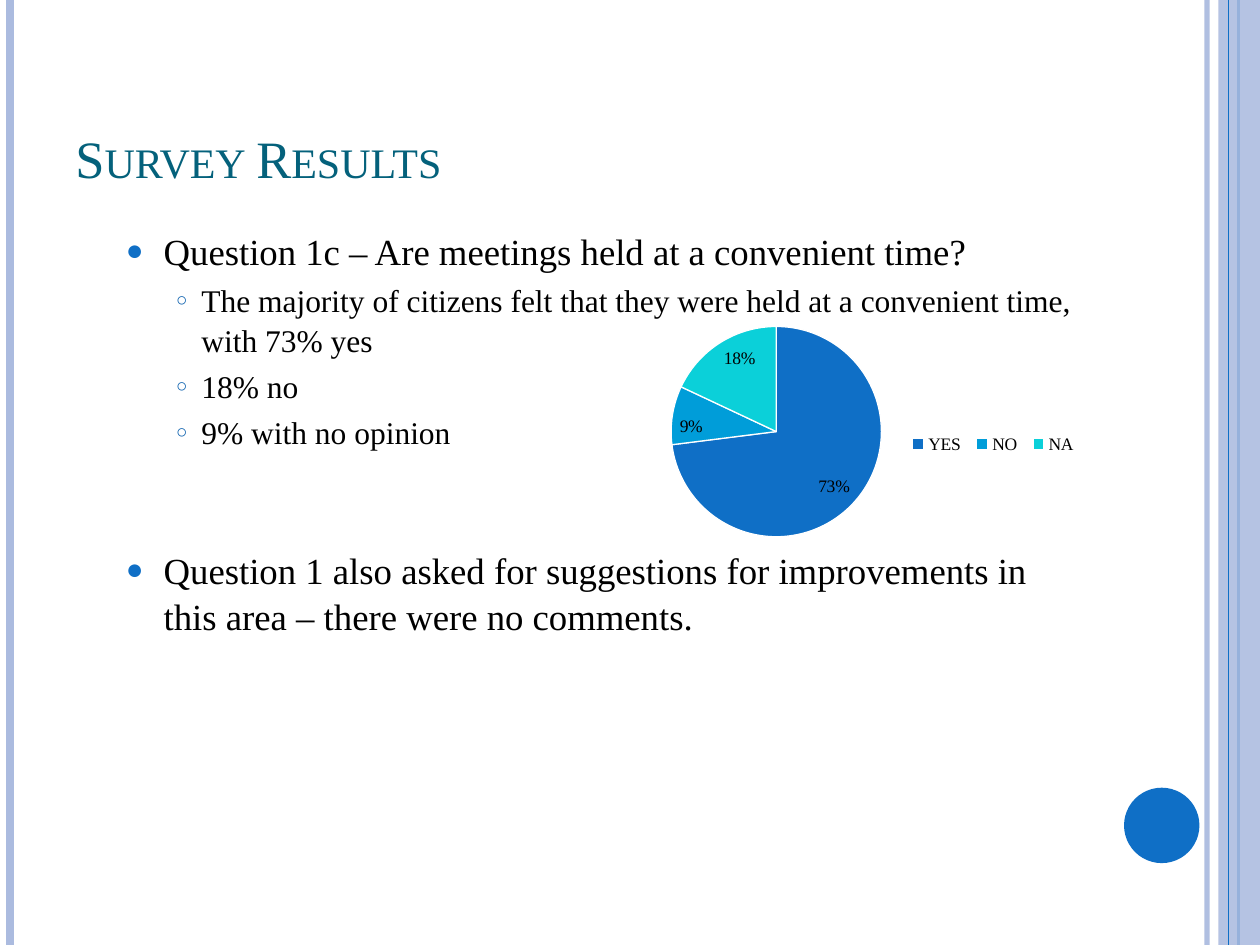
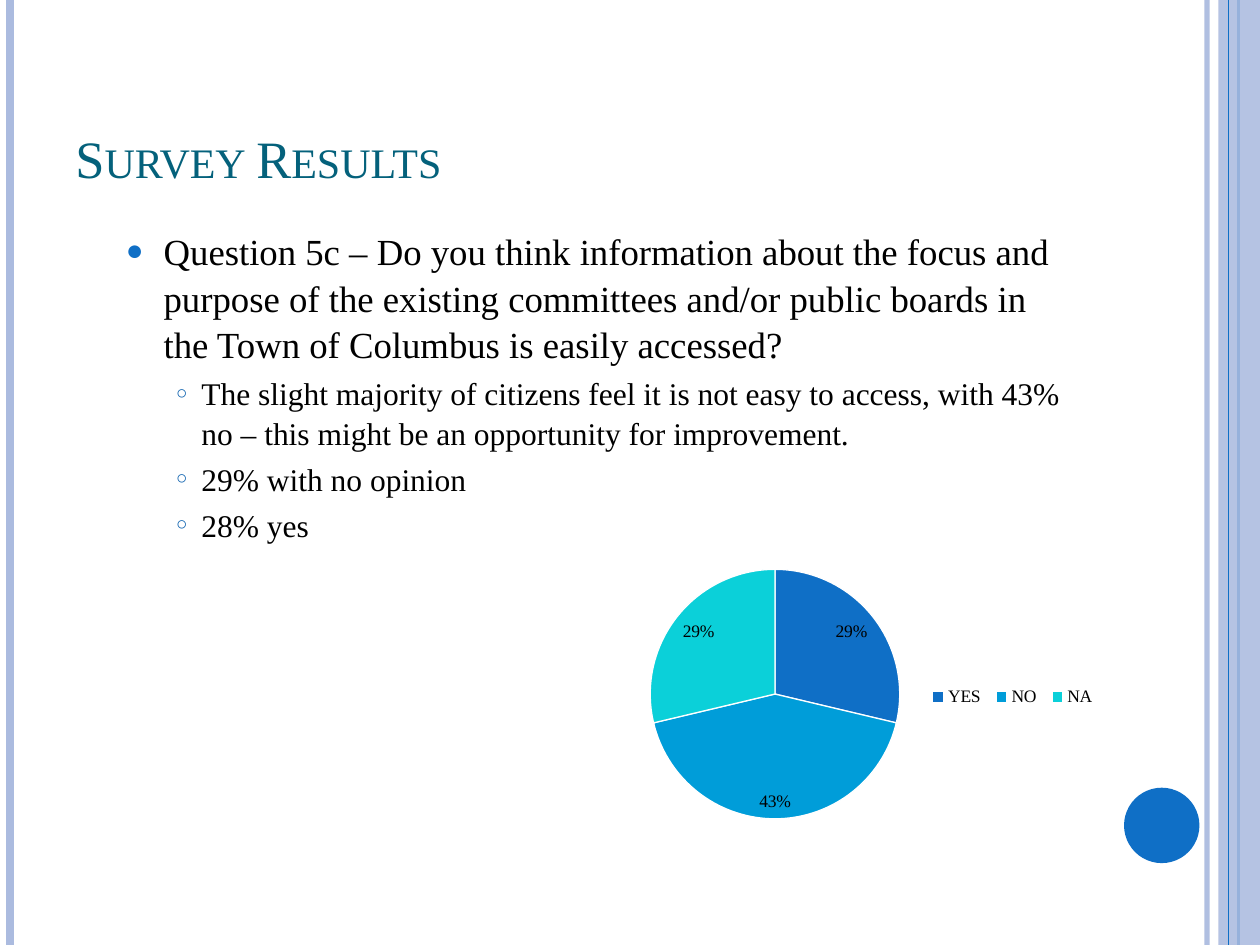
from lxml import etree
from pptx import Presentation
from pptx import util as u
from pptx.chart.data import CategoryChartData
from pptx.dml.color import RGBColor
from pptx.enum import chart as charts, shapes, text
from pptx.oxml import ns

# Shared colours and font
BLUE = RGBColor(0x0F, 0x6F, 0xC6)
DARK_BLUE = RGBColor(0x0D, 0x62, 0xAF)
SKY = RGBColor(0x00, 0x9D, 0xD9)
TURQUOISE = RGBColor(0x0B, 0xD0, 0xD9)
LAVENDER = RGBColor(0xAB, 0xBB, 0xDF)
TEAL = RGBColor(0x04, 0x61, 0x7B)
BLACK = RGBColor(0, 0, 0)
WHITE = RGBColor(255, 255, 255)
FONT = "Times New Roman"

# Text levels: size, indents in cm, space before and bullet
LEVELS = {
    1: dict(size=21, left=1.78, hanging=0.76, before=4.2,
            bullet=("●", BLUE, 80)),
    2: dict(size=18, left=2.54, hanging=0.51, before=3.6,
            bullet=("○", DARK_BLUE, 60)),
}

# Vertical lines: x in cm, weight in points, colour, opacity in percent
LINES = [(24.33, 3, LAVENDER, 93), (0.2, 4.5, LAVENDER, 100),
         (24.97, 1.5, BLUE, 100), (24.77, 0.75, BLUE, 100)]

# Slide contents: (level, text, extra space before), chart box in cm,
# plot and legend boxes as shares of the chart
SLIDES = [
    dict(
        paragraphs=[
            (1, "Question 1c – Are meetings held at a convenient time?", 0),
            (2, "The majority of citizens felt that they were held at a "
                "convenient time, with 73% yes", 0),
            (2, "18% no", 0),
            (2, "9% with no opinion", 0),
            (1, "Question 1 also asked for suggestions for improvements in "
                "this area – there were no comments.", 50),
        ],
        values=(73, 9, 18),
        chart_box=(9.53, 6.35, 13.54, 4.65),
        plot=(0.295, 0.05, 0.314, 0.912),
        legend=(0.64, 0.5, 0.27, 0.12),
    ),
    dict(
        paragraphs=[
            (1, "Question 5c – Do you think information about the focus and "
                "purpose of the existing committees and/or public boards in "
                "the Town of Columbus is easily accessed?", 0),
            (2, "The slight majority of citizens feel it is not easy to "
                "access, with 43% no – this might be an opportunity for "
                "improvement.", 0),
            (2, "29% with no opinion", 0),
            (2, "28% yes", 0),
        ],
        values=(29, 43, 29),
        chart_box=(8.05, 9.96, 14.17, 7.47),
        plot=(0.357, 0.202, 0.355, 0.676),
        legend=(0.745, 0.51, 0.26, 0.075),
    ),
]


def add_paragraph(frame, content, size=18, color=BLACK, left=0, hanging=0,
                  before=0, spacing=1.0, bullet=None, small_caps=False):
    paragraph = frame.paragraphs[0]
    if paragraph.runs:
        paragraph = frame.add_paragraph()
    paragraph.line_spacing = spacing
    paragraph.space_before = u.Pt(before)
    run = paragraph.add_run()
    run.text = content
    run.font.name = FONT
    run.font.size = u.Pt(size)
    run.font.color.rgb = color
    if small_caps:
        run.font._element.set("cap", "small")
    if bullet:
        symbol, bullet_color, percent = bullet
        properties = paragraph._p.get_or_add_pPr()
        properties.set("marL", str(u.Cm(left)))
        properties.set("indent", str(-u.Cm(hanging)))
        holder = etree.SubElement(properties, ns.qn("a:buClr"))
        etree.SubElement(holder, ns.qn("a:srgbClr"), val=str(bullet_color))
        etree.SubElement(properties, ns.qn("a:buSzPct"), val=str(percent * 1000))
        etree.SubElement(properties, ns.qn("a:buFont"), typeface=FONT)
        etree.SubElement(properties, ns.qn("a:buChar"), char=symbol)


def set_layout(parent, index, box, inner=False):
    for old in parent.findall(ns.qn("c:layout")):
        parent.remove(old)
    layout = etree.Element(ns.qn("c:layout"))
    manual = etree.SubElement(layout, ns.qn("c:manualLayout"))
    if inner:
        etree.SubElement(manual, ns.qn("c:layoutTarget"), val="inner")
    for mode in ("xMode", "yMode"):
        etree.SubElement(manual, ns.qn("c:" + mode), val="edge")
    for name, share in zip("xywh", box):
        etree.SubElement(manual, ns.qn("c:" + name), val=str(share))
    parent.insert(index, layout)


presentation = Presentation()
presentation.slide_width = u.Cm(25.4)
presentation.slide_height = u.Cm(19.05)

for content in SLIDES:
    slide = presentation.slides.add_slide(presentation.slide_layouts[6])

    # Vertical lines
    for x, weight, color, opacity in LINES:
        line = slide.shapes.add_connector(
            shapes.MSO_CONNECTOR.STRAIGHT, u.Cm(x), 0, u.Cm(x), u.Cm(19.05))
        line.line.width = u.Pt(weight)
        line.line.color.rgb = color
        etree.SubElement(line._element.spPr, ns.qn("a:effectLst"))
        if opacity < 100:
            etree.SubElement(line._element.find(".//" + ns.qn("a:srgbClr")),
                             ns.qn("a:alpha"), val=str(opacity * 1000))

    # Translucent right band and round badge
    for kind, color, box in (
            (shapes.MSO_SHAPE.RECTANGLE, LAVENDER, (24.56, 0, 0.84, 19.05)),
            (shapes.MSO_SHAPE.OVAL, BLUE, (22.66, 15.88, 1.52, 1.52))):
        shape = slide.shapes.add_shape(kind, *map(u.Cm, box))
        shape.shadow.inherit = False
        shape.fill.solid()
        shape.fill.fore_color.rgb = color
        shape.line.fill.background()
        if kind == shapes.MSO_SHAPE.RECTANGLE:
            etree.SubElement(shape._element.find(".//" + ns.qn("a:srgbClr")),
                             ns.qn("a:alpha"), val="87000")
            # The last line lies on top of the band
            shape._element.addnext(line._element)

    # Title
    title = slide.shapes.add_textbox(*map(u.Cm, (1.27, 0.76, 20.75, 3.18)))
    title.text_frame.word_wrap = True
    title.text_frame.vertical_anchor = text.MSO_ANCHOR.BOTTOM
    add_paragraph(title.text_frame, "Survey Results", size=30, color=TEAL,
                  small_caps=True)

    # Findings
    body = slide.shapes.add_textbox(*map(u.Cm, (1.27, 4.45, 20.75, 13.54)))
    body.text_frame.word_wrap = True
    for level, words, gap in content["paragraphs"]:
        style = dict(LEVELS[level])
        style["before"] += gap
        add_paragraph(body.text_frame, words, spacing=1.05, **style)

    # Pie chart of the answers
    data = CategoryChartData()
    data.categories = ["YES", "NO", "NA"]
    data.add_series("Series 1", content["values"])
    chart = slide.shapes.add_chart(
        charts.XL_CHART_TYPE.PIE, *map(u.Cm, content["chart_box"]), data).chart
    chart.has_title = False
    chart.font.name = FONT
    chart.font.size = u.Pt(10)
    chart.font.color.rgb = BLACK
    plot = chart.plots[0]
    plot.vary_by_categories = True
    for index, color in enumerate((BLUE, SKY, TURQUOISE)):
        point = plot.series[0].points[index]
        point.format.fill.solid()
        point.format.fill.fore_color.rgb = color
        point.format.line.color.rgb = WHITE
        point.format.line.width = u.Pt(0.75)
    plot.has_data_labels = True
    labels = plot.data_labels
    labels.show_percentage = True
    labels.show_value = False
    labels.number_format = "0%"
    labels.number_format_is_linked = False
    labels.position = charts.XL_LABEL_POSITION.INSIDE_END
    chart.has_legend = True
    chart.legend.position = charts.XL_LEGEND_POSITION.TOP
    chart.legend.include_in_layout = False
    set_layout(chart._chartSpace.find(".//" + ns.qn("c:plotArea")), 0,
               content["plot"], inner=True)
    set_layout(chart._chartSpace.find(".//" + ns.qn("c:legend")), 1,
               content["legend"])

presentation.save("out.pptx")
